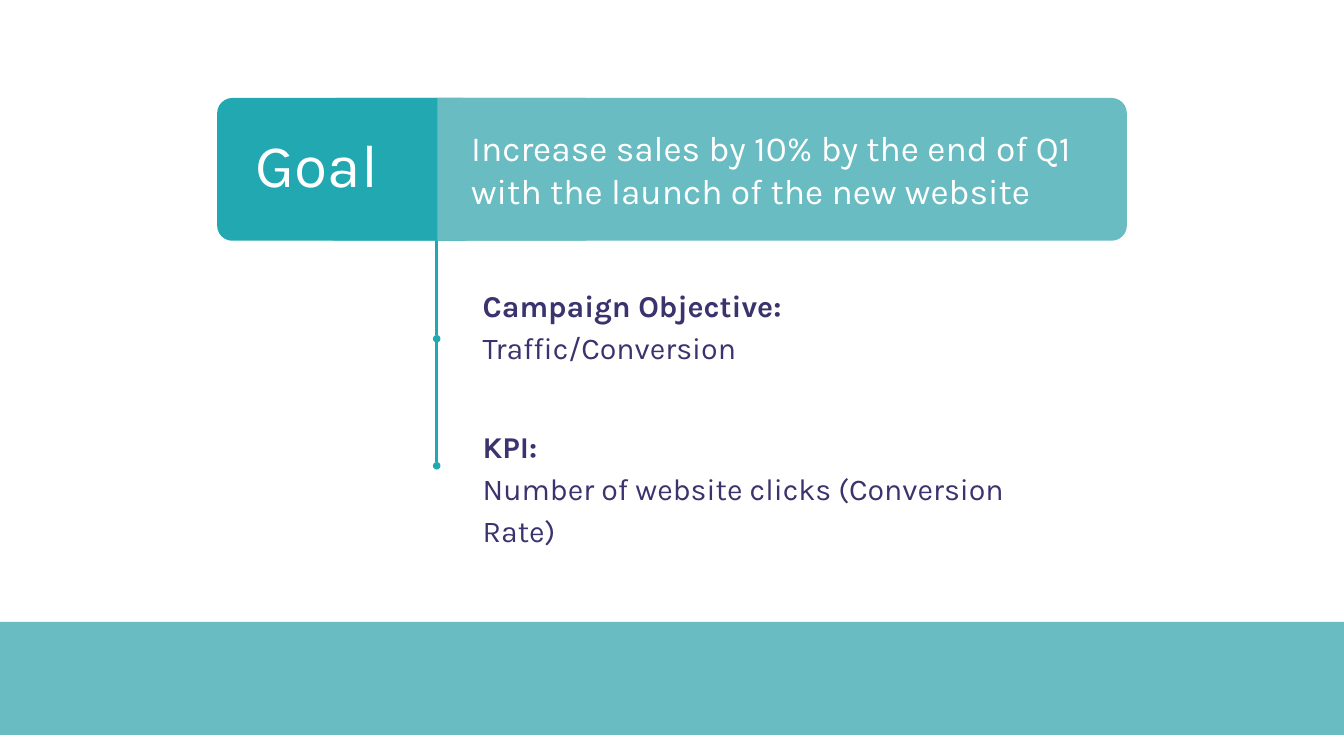
from lxml import etree
from pptx import Presentation
from pptx.dml.color import RGBColor
from pptx.enum import shapes, text
from pptx.oxml import ns
from pptx.util import Inches, Pt

# Content
GOAL = "Goal"
GOAL_TEXT = "Increase sales by 10% by the end of Q1 with the launch of the new website"
DETAILS = [  # heading, body, left, top, width, height
    ("Campaign Objective:", "Traffic/Conversion", 7.76, 4.6, 6.92, 1.5),
    ("KPI:", "Number of website clicks (Conversion Rate)", 7.76, 7.28, 9.18, 1.5),
]

# Look and layout
FONT = "Karla"
TEAL, LIGHT, NAVY, WHITE = "21A8B0", "69BCC1", "3B336E", "FFFFFF"
SLIDE_W, SLIDE_H = 22.22, 12.15
FOOTER_H = 1.87
BAR_TOP, BAR_H = 1.62, 2.36
STEM_X, STEM_TOP, STEM_STEP = 7.22, 3.5, 2.1
BAR_PARTS = [  # left, width, corner ratio, colour
    (5.31, 13.32, 0.106, LIGHT),
    (3.59, 4.31, 0.106, TEAL),
    (7.23, 2.46, 0, LIGHT),
]


def color(value):
    return RGBColor.from_string(value)


def add_block(s, kind, x, y, w, h, fill):
    sp = s.shapes.add_shape(kind, Inches(x), Inches(y), Inches(w), Inches(h))
    sp.shadow.inherit = False
    sp.fill.solid()
    sp.fill.fore_color.rgb = color(fill)
    sp.line.fill.background()
    return sp


def add_text(s, x, y, w, h, lines, size, ink, inset=0.22, spacing=1.0):
    """Add a text box; lines holds (words, bold) pairs, one per paragraph."""
    sp = s.shapes.add_textbox(Inches(x), Inches(y), Inches(w), Inches(h))
    tf = sp.text_frame
    tf.word_wrap = True
    tf.vertical_anchor = text.MSO_ANCHOR.MIDDLE
    tf.margin_left = tf.margin_right = Inches(inset)
    tf.margin_top = tf.margin_bottom = Inches(inset)
    for i, (words, bold) in enumerate(lines):
        p = tf.add_paragraph() if i else tf.paragraphs[0]
        p.line_spacing = spacing
        r = p.add_run()
        r.text = words
        r.font.name = FONT
        r.font.size = Pt(size)
        r.font.bold = bold
        r.font.color.rgb = color(ink)


def add_stem(s, x, top, bottom):
    """Add a vertical line that ends in a dot."""
    line = s.shapes.add_connector(shapes.MSO_CONNECTOR.STRAIGHT,
                                  Inches(x), Inches(top), Inches(x), Inches(bottom))
    line.line.color.rgb = color(TEAL)
    line.line.width = Pt(3)
    etree.SubElement(line.line._get_or_add_ln(), ns.qn("a:tailEnd"), type="oval")
    etree.SubElement(line._element.spPr, ns.qn("a:effectLst"))


prs = Presentation()
prs.slide_width, prs.slide_height = Inches(SLIDE_W), Inches(SLIDE_H)
s = prs.slides.add_slide(prs.slide_layouts[6])

# Footer band
add_block(s, shapes.MSO_SHAPE.RECTANGLE, 0, SLIDE_H - FOOTER_H, SLIDE_W, FOOTER_H, LIGHT)

# Stem segments and details
for i, (heading, body, x, y, w, h) in enumerate(DETAILS):
    top = STEM_TOP + i * STEM_STEP
    add_stem(s, STEM_X, top, top + STEM_STEP)
    add_text(s, x, y, w, h, [(heading, True), (body, False)], 36, NAVY, spacing=1.15)

# Goal bar
for x, w, corner, fill in BAR_PARTS:
    sp = add_block(s, shapes.MSO_SHAPE.ROUNDED_RECTANGLE, x, BAR_TOP, w, BAR_H, fill)
    sp.adjustments[0] = corner
add_text(s, 7.57, 1.71, 10.87, 2.16, [(GOAL_TEXT, False)], 42, WHITE)
add_text(s, 4.13, 1.64, 2.62, 2.13, [(GOAL, False)], 72, WHITE, inset=0.1)

prs.save("out.pptx")
